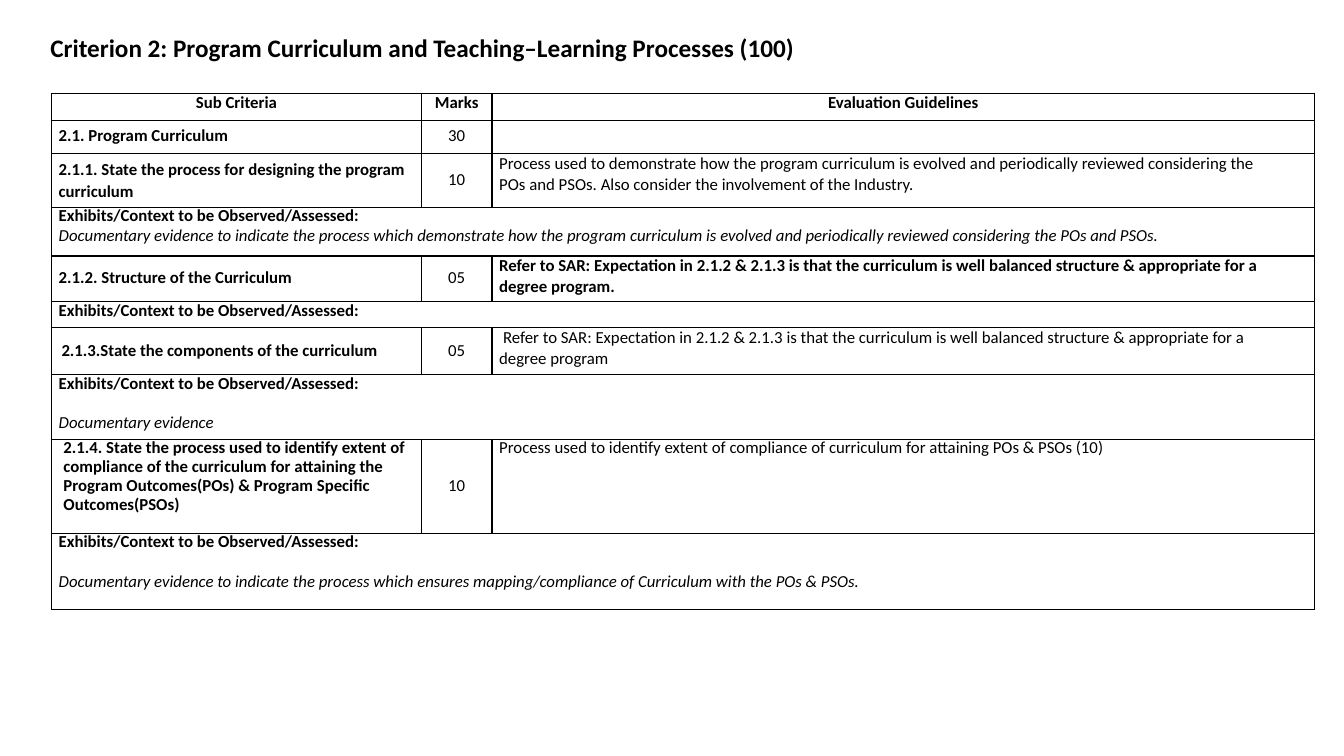
import pptx
import pptx.dml.color
import pptx.enum.text
import pptx.oxml
import pptx.oxml.ns
import pptx.util
from pptx.util import Cm, Pt

COLORS = {"text": "000000", "border": "000000"}
FONT = "Calibri"
CENTER = pptx.enum.text.PP_ALIGN.CENTER
TOP = pptx.enum.text.MSO_ANCHOR.TOP
MIDDLE = pptx.enum.text.MSO_ANCHOR.MIDDLE

COLUMN_WIDTHS = [9.32, 1.78, 20.73]
HEADERS = ["Sub Criteria", "Marks", "Evaluation Guidelines"]
EXHIBITS = "Exhibits/Context to be Observed/Assessed:"
BALANCED = ("Refer to SAR: Expectation in 2.1.2 & 2.1.3 is that the curriculum is "
            "well balanced structure & appropriate for a degree program")

# (height in cm, sub criterion, marks, guideline, cell options by column)
CRITERIA = [
    (0.84, "2.1. Program Curriculum", "30", "", {}),
    (1.35, "2.1.1. State the process for designing the program curriculum", "10",
     "Process used to demonstrate how the program curriculum is evolved and periodically "
     "reviewed considering the POs and PSOs. Also consider the involvement of the Industry.",
     {0: {"spacing": 1.07}}),
    (1.15, "2.1.2. Structure of the Curriculum", "05", BALANCED + ".", {2: {"bold": True}}),
    (1.18, "2.1.3.State the components of the curriculum", "05", BALANCED,
     {0: {"left": 0.25}, 2: {"first_indent": 0.1}}),
    (2.36, "2.1.4. State the process used to identify extent of compliance of the curriculum "
     "for attaining the Program Outcomes(POs) & Program Specific Outcomes(PSOs)", "10",
     "Process used to identify extent of compliance of curriculum for attaining POs & PSOs (10)",
     {0: {"left": 0.3, "anchor": TOP}, 2: {"spacing": Pt(13.4)}}),
]

# Exhibits row after each criterion: (height in cm, evidence, space before in pt)
EXHIBIT_ROWS = [
    None,
    (1.23, "Documentary evidence to indicate the process which demonstrate how the program "
     "curriculum is evolved and periodically reviewed considering the POs and PSOs.", 0.3),
    (0.66, "", 0),
    (1.64, "Documentary evidence", 14.7),
    (1.92, "Documentary evidence to indicate the process which ensures mapping/compliance of "
     "Curriculum with the POs & PSOs.", 14.7),
]


def format_runs(p, size=12, bold=False, italic=False):
    for r in p.runs:
        r.font.name = FONT
        r.font.size = Pt(size)
        r.font.bold = bold
        r.font.italic = italic
        r.font.color.rgb = pptx.dml.color.RGBColor.from_string(COLORS["text"])


def add_title(slide, text):
    sp = slide.shapes.add_textbox(Cm(1.02), Cm(0.69), Cm(23.27), Cm(1.02))
    tf = sp.text_frame
    tf.word_wrap = True
    tf.text = text
    format_runs(tf.paragraphs[0], size=18, bold=True)


def style_cell(cell):
    """Clear the fill and insets, and draw all four borders."""
    tc_pr = cell._tc.get_or_add_tcPr()
    for side in ("lnL", "lnR", "lnT", "lnB"):
        tc_pr.append(pptx.oxml.parse_xml(
            f'<a:{side} {pptx.oxml.ns.nsdecls("a")} w="{Pt(1)}"><a:solidFill>'
            f'<a:srgbClr val="{COLORS["border"]}"/></a:solidFill></a:{side}>'))
    cell.fill.background()
    cell.margin_left = cell.margin_right = cell.margin_top = cell.margin_bottom = 0


def write_cell(cell, text, bold=False, align=None, anchor=TOP, spacing=1.0,
               left=0.0, right=0.0, first_indent=0.0):
    cell.vertical_anchor = anchor
    cell.margin_left, cell.margin_right = Cm(left), Cm(right)
    cell.text_frame.text = text
    p = cell.text_frame.paragraphs[0]
    p.alignment = align
    p.line_spacing = spacing
    if first_indent:
        p._p.get_or_add_pPr().set("indent", str(Cm(first_indent)))
    format_runs(p, bold=bold)


def write_criterion(cells, texts, options):
    defaults = [
        {"bold": True, "anchor": MIDDLE, "spacing": Pt(13.4), "left": 0.18},
        {"align": CENTER, "anchor": MIDDLE, "spacing": Pt(13.4)},
        {"left": 0.18, "right": 1},
    ]
    for i, (cell, text) in enumerate(zip(cells, texts)):
        if text:
            write_cell(cell, text, **{**defaults[i], **options.get(i, {})})


def write_exhibits(cells, evidence, space_before):
    cells[0].merge(cells[-1])
    write_cell(cells[0], EXHIBITS, bold=True, spacing=Pt(13.7), left=0.18)
    if evidence:
        p = cells[0].text_frame.add_paragraph()
        p.text = evidence
        p.space_before = Pt(space_before)
        p.line_spacing = Pt(13.4)
        format_runs(p, italic=True)


def add_criteria_table(slide):
    rows = [(0.67, "header", None)]
    for (height, *texts, options), exhibits in zip(CRITERIA, EXHIBIT_ROWS):
        rows.append((height, "criterion", (texts, options)))
        if exhibits:
            rows.append((exhibits[0], "exhibits", exhibits[1:]))

    table = slide.shapes.add_table(
        len(rows), len(COLUMN_WIDTHS), Cm(1.3), Cm(2.36),
        Cm(sum(COLUMN_WIDTHS)), Cm(sum(row[0] for row in rows))).table
    table.first_row = table.horz_banding = False
    for column, width in zip(table.columns, COLUMN_WIDTHS):
        column.width = Cm(width)

    for row, (height, kind, content) in zip(table.rows, rows):
        row.height = Cm(height)
        cells = list(row.cells)
        for cell in cells:
            style_cell(cell)
        if kind == "header":
            for cell, text in zip(cells, HEADERS):
                write_cell(cell, text, bold=True, align=CENTER, spacing=Pt(13.7))
        elif kind == "criterion":
            write_criterion(cells, *content)
        else:
            write_exhibits(cells, *content)


def main():
    prs = pptx.Presentation()
    prs.slide_width, prs.slide_height = Cm(33.87), Cm(19.05)
    slide = prs.slides.add_slide(prs.slide_layouts[6])
    add_title(slide, "Criterion 2: Program Curriculum and Teaching–Learning Processes (100)")
    add_criteria_table(slide)
    prs.save("out.pptx")


if __name__ == "__main__":
    main()
